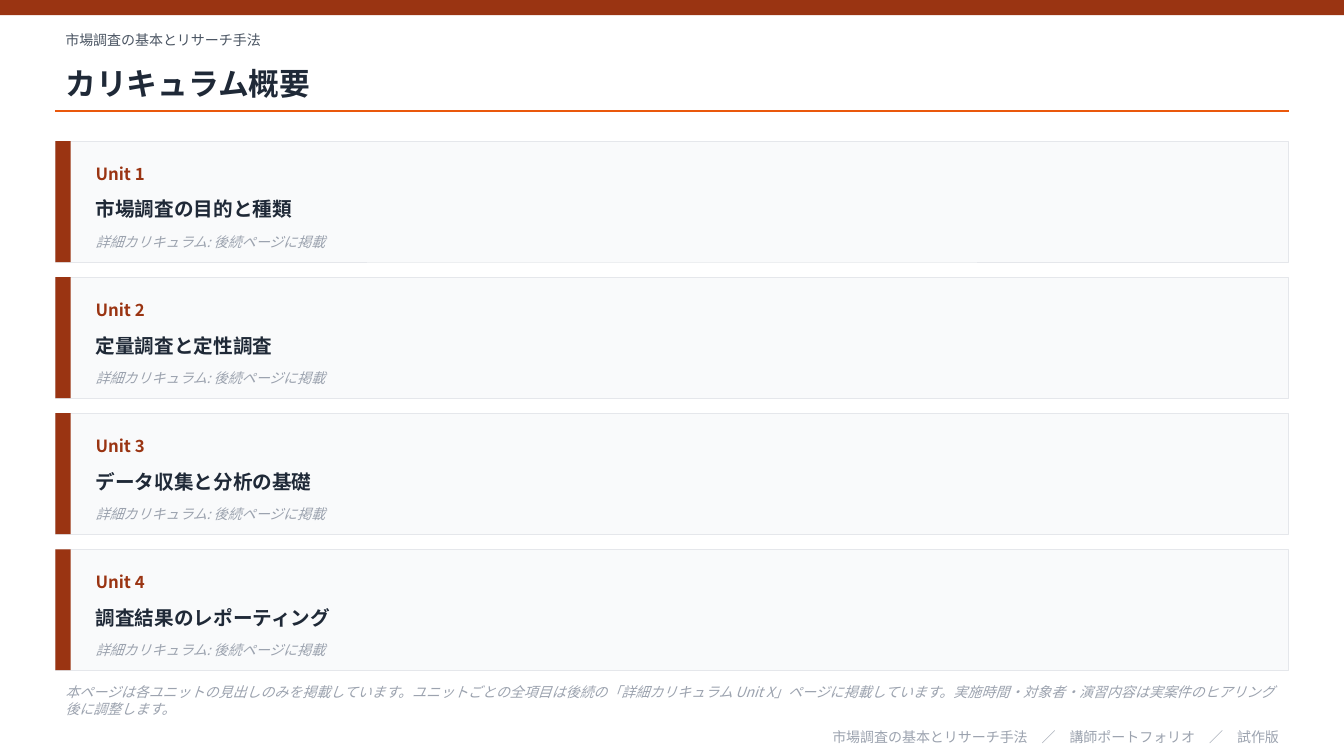
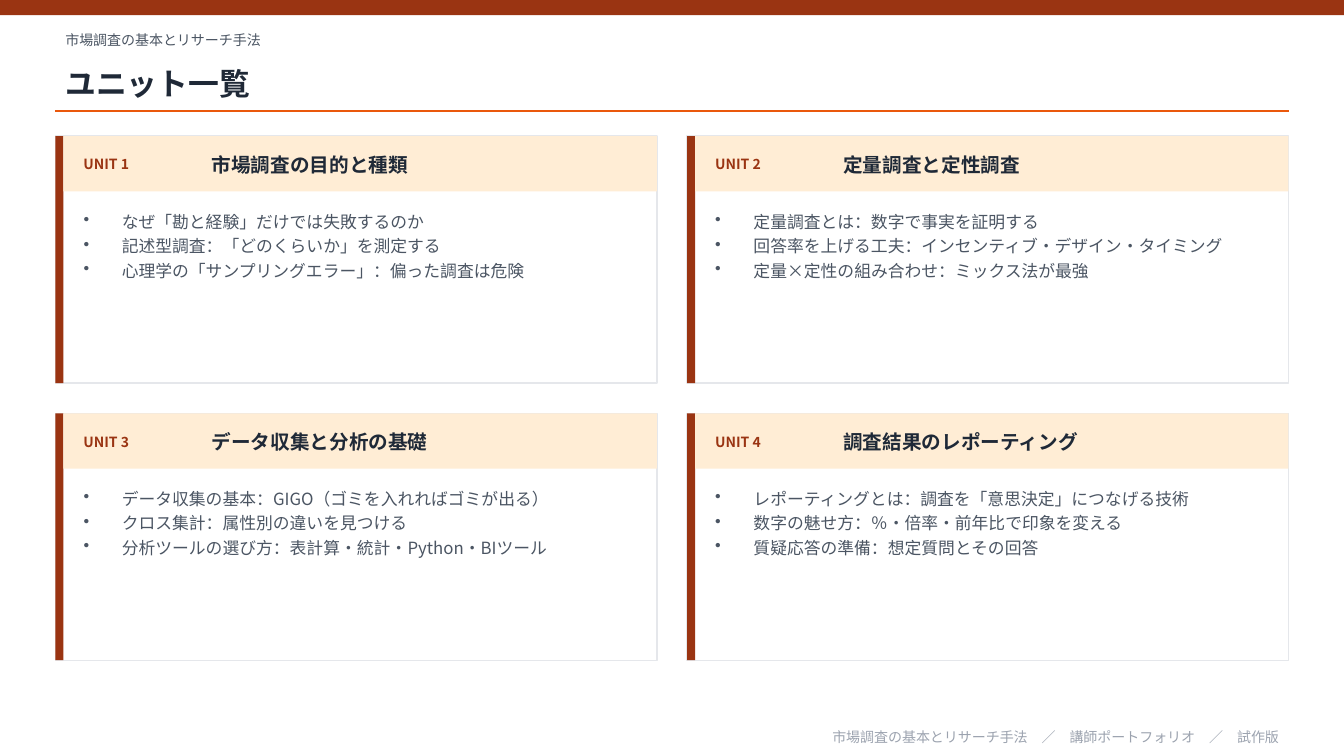
from pptx import Presentation
from pptx.dml.color import RGBColor
from pptx.enum.shapes import MSO_CONNECTOR, MSO_SHAPE
from pptx.enum.text import MSO_ANCHOR, PP_ALIGN
from pptx.oxml.ns import qn
from pptx.util import Inches, Pt
from lxml import etree

RECT, LINE = MSO_SHAPE.RECTANGLE, MSO_CONNECTOR.STRAIGHT
TOP, MIDDLE = MSO_ANCHOR.TOP, MSO_ANCHOR.MIDDLE
LEFT, RIGHT = PP_ALIGN.LEFT, PP_ALIGN.RIGHT

FONT = "Noto Sans CJK JP"
RUST, ORANGE, PEACH = "9A3412", "EA580C", "FFEDD5"
INK, SLATE, MUTED = "1F2937", "4B5563", "9CA3AF"
BORDER, PALE, WHITE = "E5E7EB", "F9FAFB", "FFFFFF"

WIDTH, HEIGHT = 13.33, 7.5
EDGE, SPAN = 0.55, 12.23

COURSE = "市場調査の基本とリサーチ手法"
FOOTER = COURSE + "　／　講師ポートフォリオ　／　試作版"
DETAIL = "詳細カリキュラム: 後続ページに掲載"
NOTE = (
    "本ページは各ユニットの見出しのみを掲載しています。"
    "ユニットごとの全項目は後続の「詳細カリキュラム Unit X」ページに掲載しています。"
    "実施時間・対象者・演習内容は実案件のヒアリング後に調整します。"
)
UNITS = [
    ("市場調査の目的と種類", [
        "なぜ「勘と経験」だけでは失敗するのか",
        "記述型調査：「どのくらいか」を測定する",
        "心理学の「サンプリングエラー」：偏った調査は危険",
    ]),
    ("定量調査と定性調査", [
        "定量調査とは：数字で事実を証明する",
        "回答率を上げる工夫：インセンティブ・デザイン・タイミング",
        "定量×定性の組み合わせ：ミックス法が最強",
    ]),
    ("データ収集と分析の基礎", [
        "データ収集の基本：GIGO（ゴミを入れればゴミが出る）",
        "クロス集計：属性別の違いを見つける",
        "分析ツールの選び方：表計算・統計・Python・BIツール",
    ]),
    ("調査結果のレポーティング", [
        "レポーティングとは：調査を「意思決定」につなげる技術",
        "数字の魅せ方：％・倍率・前年比で印象を変える",
        "質疑応答の準備：想定質問とその回答",
    ]),
]


def color(code):
    return RGBColor.from_string(code)


def add_rect(slide, x, y, w, h, fill, line=None, weight=1):
    box = slide.shapes.add_shape(RECT, Inches(x), Inches(y), Inches(w), Inches(h))
    box.shadow.inherit = False
    box.fill.solid()
    box.fill.fore_color.rgb = color(fill)
    if line:
        box.line.color.rgb = color(line)
        box.line.width = Pt(weight)
    else:
        box.line.fill.background()


def add_bullet(para):
    props = para._p.get_or_add_pPr()
    props.set("marL", str(Inches(0.38)))
    props.set("indent", str(Inches(-0.38)))
    etree.SubElement(props, qn("a:buChar")).set("char", "•")


def add_text(slide, text, x, y, w, h, size=10, ink=INK, bold=False,
             italic=False, align=LEFT, anchor=MIDDLE, bullets=False):
    """Add a text box; text is one string or a list of paragraphs."""
    box = slide.shapes.add_textbox(Inches(x), Inches(y), Inches(w), Inches(h))
    frame = box.text_frame
    frame.word_wrap = True
    frame.vertical_anchor = anchor
    lines = [text] if isinstance(text, str) else text
    for i, line in enumerate(lines):
        para = frame.add_paragraph() if i else frame.paragraphs[0]
        para.alignment = align
        if bullets:
            para.space_after = Pt(3)
            add_bullet(para)
        run = para.add_run()
        run.text = line
        font = run.font
        font.size, font.bold, font.italic = Pt(size), bold, italic
        font.color.rgb = color(ink)
        font.name = FONT
        east = etree.SubElement(run._r.get_or_add_rPr(), qn("a:ea"))
        east.set("typeface", FONT)


def add_rule(slide, y):
    rule = slide.shapes.add_connector(
        LINE, Inches(EDGE), Inches(y), Inches(EDGE + SPAN), Inches(y))
    rule.line.color.rgb = color(ORANGE)
    rule.line.width = Pt(1)
    etree.SubElement(rule._element.spPr, qn("a:effectLst"))


def add_page(deck, title):
    """Add a blank slide with the shared band, title, rule and footer."""
    slide = deck.slides.add_slide(deck.slide_layouts[6])
    add_rect(slide, 0, 0, WIDTH, 0.15, RUST)
    add_text(slide, COURSE, EDGE, 0.25, SPAN, 0.3, ink=SLATE)
    add_text(slide, title, EDGE, 0.55, SPAN, 0.55, size=22, bold=True)
    add_rule(slide, 1.1)
    add_text(slide, FOOTER, EDGE, 7.2, SPAN, 0.22, ink=MUTED, align=RIGHT)
    return slide


def add_row(slide, num, title, y):
    x, w, h = EDGE + 0.3, SPAN - 0.5, 1.2
    add_rect(slide, EDGE, y, SPAN, h, PALE, BORDER, 0.5)
    add_rect(slide, EDGE, y, 0.15, h, RUST)
    add_text(slide, f"Unit {num}", x, y + 0.12, 1.5, 0.4,
             size=12, ink=RUST, bold=True)
    add_text(slide, title, x, y + 0.45, w, 0.45, size=14, bold=True)
    add_text(slide, DETAIL, x, y + 0.85, w, 0.3, ink=MUTED, italic=True)


def add_card(slide, num, title, points, x, y, w, h):
    bar = 0.08
    add_rect(slide, x, y, w, h, WHITE, BORDER)
    add_rect(slide, x, y, bar, h, RUST)
    add_rect(slide, x + bar, y, w - bar, 0.55, PEACH)
    add_text(slide, f"UNIT {num}", x + 0.18, y + 0.08, 1.2, 0.4,
             ink=RUST, bold=True)
    add_text(slide, title, x + 1.45, y + 0.08, w - 1.6, 0.4, size=14, bold=True)
    add_text(slide, points, x + 0.18, y + 0.7, w - 0.36, 1.6,
             size=12, ink=SLATE, anchor=TOP, bullets=True)


def build_outline(deck):
    slide = add_page(deck, "カリキュラム概要")
    for i, (title, _) in enumerate(UNITS):
        add_row(slide, i + 1, title, 1.4 + i * 1.35)
    add_text(slide, NOTE, EDGE, 6.75, SPAN, 0.4, ink=MUTED, italic=True)


def build_cards(deck):
    slide = add_page(deck, "ユニット一覧")
    gap, h = 0.3, 2.45
    w = (SPAN - gap) / 2
    for i, (title, points) in enumerate(UNITS):
        row, col = divmod(i, 2)
        add_card(slide, i + 1, title, points,
                 EDGE + col * (w + gap), 1.35 + row * (h + gap), w, h)


def main():
    deck = Presentation()
    deck.slide_width, deck.slide_height = Inches(WIDTH), Inches(HEIGHT)
    build_outline(deck)
    build_cards(deck)
    deck.save("out.pptx")


if __name__ == "__main__":
    main()
